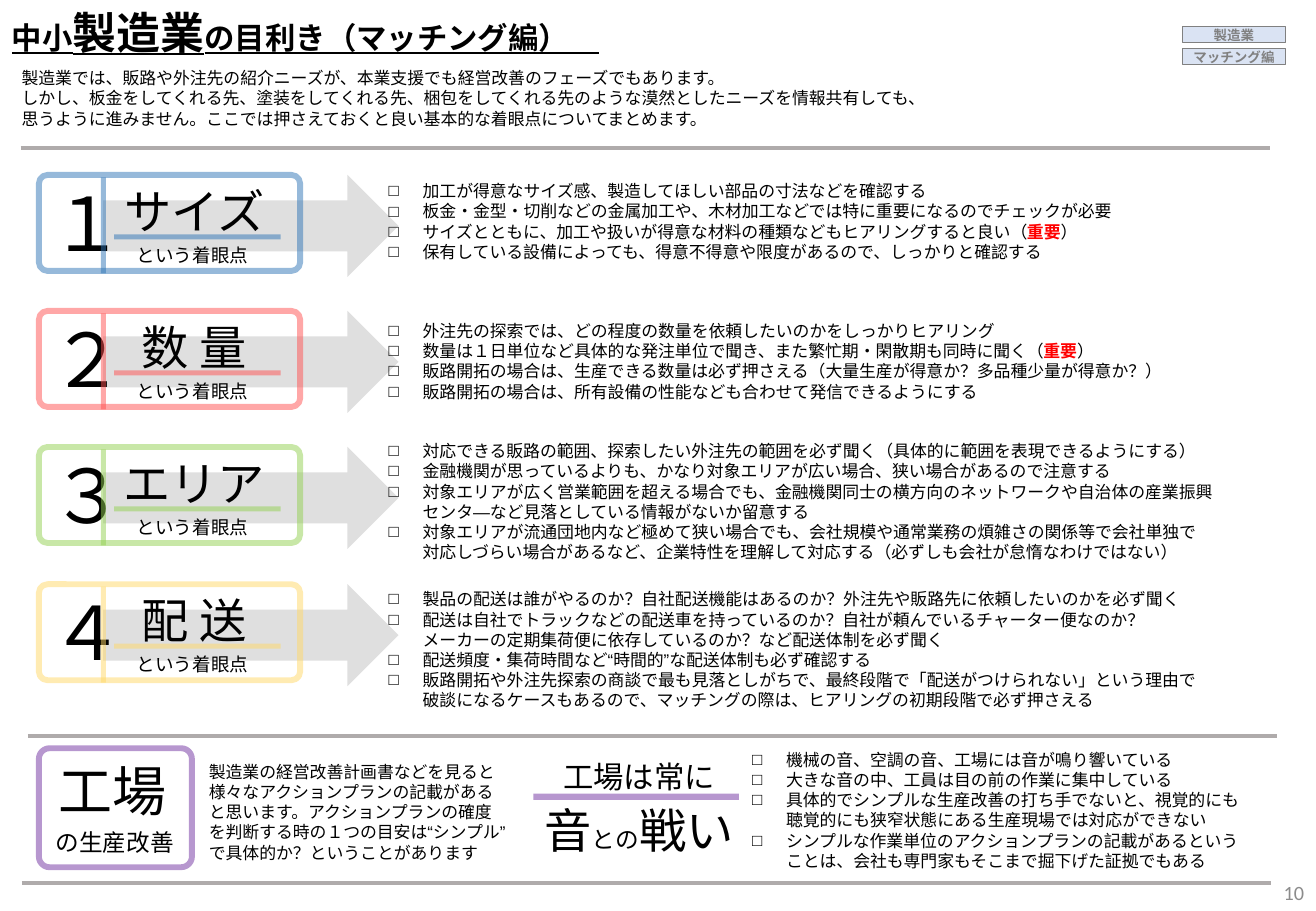
from lxml.etree import SubElement
from pptx import Presentation
from pptx.dml.color import RGBColor
from pptx.enum.shapes import MSO_CONNECTOR, MSO_SHAPE
from pptx.enum.text import MSO_ANCHOR, PP_ALIGN
from pptx.oxml.ns import qn
from pptx.util import Pt

SCALE = 9144
ARIAL, CALIBRI, NOTO = "Arial", "Calibri", "Noto Sans CJK JP"
LEADING = {ARIAL: 1.2, CALIBRI: 1.25, NOTO: 1.3}
BLACK, GREY, RULE, RED, PURPLE = "000000", "808080", "AFABAB", "FF0000", "7030A0"


def px(*nums):
    return [round(n * SCALE) for n in nums]


def paint(target, tint, alpha=100):
    target.solid()
    target.fore_color.rgb = RGBColor.from_string(tint)
    if alpha < 100:
        color = target._xPr.find(f"{qn('a:solidFill')}/{qn('a:srgbClr')}")
        SubElement(color, qn("a:alpha")).set("val", str(alpha * 1000))


class Deck:
    def __init__(self, width, height):
        self.file = Presentation()
        self.file.slide_width, self.file.slide_height = px(width, height)
        self.slide = self.file.slides.add_slide(self.file.slide_layouts[6])
        self.shapes = self.slide.shapes

    def style(self, frame, rows, size, font, tint, bold, align):
        frame.word_wrap = True
        frame.text = "\n".join(row.split("|")[0] for row in rows)
        for para, row in zip(frame.paragraphs, rows):
            para.alignment = align
            para.line_spacing = Pt(round(size * LEADING[font], 1))
            for part in row.split("|")[1:]:
                para.add_run().text = part
            for run in para.runs:
                run.font.name = font
                SubElement(run.font._element, qn("a:ea")).set("typeface", font)
                run.font.size = Pt(size)
                run.font.bold = bold
                run.font.color.rgb = RGBColor.from_string(tint)
        return frame

    def text(self, area, rows, size=10, font=ARIAL, tint=BLACK, bold=False,
             align=PP_ALIGN.LEFT):
        frame = self.shapes.add_textbox(*px(*area)).text_frame
        return self.style(frame, rows, size, font, tint, bold, align)

    def label(self, area, words, size, font=NOTO):
        return self.text(area, [words], size, font, align=PP_ALIGN.CENTER)

    def checks(self, area, rows):
        frame = self.text(area, rows)
        for para in frame.paragraphs:
            props = para._p.get_or_add_pPr()
            indent = px(28)[0]
            props.set("marL", str(indent))
            props.set("indent", str(-indent))
            SubElement(props, qn("a:buFont")).set("typeface", ARIAL)
            SubElement(props, qn("a:buChar")).set("char", "□")
            for run in para.runs:
                if run.text == "重要":
                    run.font.bold = True
                    run.font.color.rgb = RGBColor.from_string(RED)

    def shape(self, kind, area, fill=None, line=None, width=1, alpha=100):
        shape = self.shapes.add_shape(kind, *px(*area))
        shape.shadow.inherit = False
        if fill:
            paint(shape.fill, fill, alpha)
        else:
            shape.fill.background()
        if line:
            shape.line.width = Pt(width)
            paint(shape.line.fill, line, alpha)
        else:
            shape.line.fill.background()
        return shape

    def frame(self, area, tint):
        shape = self.shape(MSO_SHAPE.ROUNDED_RECTANGLE, area, None, tint, 3.5, 50)
        shape.adjustments[0] = 0.09

    def line(self, start, end, tint=RULE, width=2.25, alpha=100):
        line = self.shapes.add_connector(MSO_CONNECTOR.STRAIGHT, *px(*start, *end))
        line.line.width = Pt(width)
        paint(line.line.fill, tint, alpha)
        SubElement(line._element.spPr, qn("a:effectLst"))

    def badge(self, top, words):
        shape = self.shape(MSO_SHAPE.RECTANGLE, (973, top, 85, 13), "DAE3F3", GREY, 0.75)
        frame = self.style(shape.text_frame, [words], 8, CALIBRI, GREY, True,
                           PP_ALIGN.CENTER)
        frame.vertical_anchor = MSO_ANCHOR.MIDDLE
        frame.margin_left = frame.margin_right = 0
        frame.margin_top = frame.margin_bottom = 0

    def card(self, top, digit, title, tint):
        self.shape(MSO_SHAPE.RIGHT_ARROW, (85, top, 243, 84), GREY, alpha=25)
        self.label((91, top - 3, 138, 57), title, 28)
        self.label((32, top - 9, 55, 84), digit, 44)
        self.frame((32, top, 215, 79), tint)
        self.line((94, top + 51), (231, top + 51), tint, 3, 50)
        self.label((87, top + 51, 143, 29), "という着眼点", 11, CALIBRI)
        self.line((85, top + 2), (85, top + 81), tint, 3, 50)


CARDS = [
    (144, "１", "サイズ", "2E75B6", 144, [
        "加工が得意なサイズ感、製造してほしい部品の寸法などを確認する",
        "板金・金型・切削などの金属加工や、木材加工などでは特に重要になるのでチェックが必要",
        "サイズとともに、加工や扱いが得意な材料の種類などもヒアリングすると良い（|重要|）",
        "保有している設備によっても、得意不得意や限度があるので、しっかりと確認する"]),
    (256, "２", "数 量", "FF5050", 259, [
        "外注先の探索では、どの程度の数量を依頼したいのかをしっかりヒアリング",
        "数量は１日単位など具体的な発注単位で聞き、また繁忙期・閑散期も同時に聞く（|重要|）",
        "販路開拓の場合は、生産できる数量は必ず押さえる（大量生産が得意か？多品種少量が得意か？）",
        "販路開拓の場合は、所有設備の性能なども合わせて発信できるようにする"]),
    (368, "３", "エリア", "92D050", 358, [
        "対応できる販路の範囲、探索したい外注先の範囲を必ず聞く（具体的に範囲を表現できるようにする）",
        "金融機関が思っているよりも、かなり対象エリアが広い場合、狭い場合があるので注意する",
        "対象エリアが広く営業範囲を超える場合でも、金融機関同士の横方向のネットワークや自治体の産業振興"
        "\vセンタ―など見落としている情報がないか留意する",
        "対象エリアが流通団地内など極めて狭い場合でも、会社規模や通常業務の煩雑さの関係等で会社単独で"
        "\v対応しづらい場合があるなど、企業特性を理解して対応する（必ずしも会社が怠惰なわけではない）"]),
    (481, "４", "配 送", "FFD966", 480, [
        "製品の配送は誰がやるのか？自社配送機能はあるのか？外注先や販路先に依頼したいのかを必ず聞く",
        "配送は自社でトラックなどの配送車を持っているのか？自社が頼んでいるチャーター便なのか？"
        "\vメーカーの定期集荷便に依存しているのか？など配送体制を必ず聞く",
        "配送頻度・集荷時間など“時間的”な配送体制も必ず確認する",
        "販路開拓や外注先探索の商談で最も見落としがちで、最終段階で「配送がつけられない」という理由で"
        "\v破談になるケースもあるので、マッチングの際は、ヒアリングの初期段階で必ず押さえる"]),
]


def main():
    deck = Deck(1083, 750)
    for left, top in ((17, 122), (23, 606), (18, 727)):
        deck.line((left, top), (left + 1028, top))

    title = deck.text((0, 0, 705, 54), ["中小|製造業|の目利き（マッチング編）　"], 18, bold=True)
    title.paragraphs[0].line_spacing = Pt(31)
    for run in title.paragraphs[0].runs:
        run.font.underline = True
    title.paragraphs[0].runs[1].font.size = Pt(26)
    deck.badge(22, "製造業")
    deck.badge(40, "マッチング編")
    deck.text((8, 51, 837, 77), [
        "製造業では、販路や外注先の紹介ニーズが、本業支援でも経営改善のフェーズでもあります。",
        "しかし、板金をしてくれる先、塗装をしてくれる先、梱包をしてくれる先のような漠然としたニーズを情報共有しても、",
        "思うように進みません。ここでは押さえておくと良い基本的な着眼点についてまとめます。"])

    for top, digit, name, tint, start, rows in CARDS:
        deck.card(top, digit, name, tint)
        deck.checks((310, start, 758, 111), rows)

    deck.label((19, 614, 148, 64), "工場", 32)
    deck.frame((32, 616, 126, 98), PURPLE)
    deck.label((20, 676, 149, 34), "の生産改善", 14, CALIBRI)
    deck.text((162, 622, 368, 94), [
        "製造業の経営改善計画書などを見ると",
        "様々なアクションプランの記載がある",
        "と思います。アクションプランの確度",
        "を判断する時の１つの目安は“シンプル”",
        "で具体的か？ということがあります"])
    deck.label((415, 617, 222, 40), "工場は常に", 18)
    deck.line((439, 656), (608, 656), PURPLE, 3.75, 50)
    fight = deck.label((402, 651, 248, 57), "音|との|戦い", 28)
    fight.paragraphs[0].runs[1].font.size = Pt(14)
    deck.checks((609, 612, 442, 128), [
        "機械の音、空調の音、工場には音が鳴り響いている",
        "大きな音の中、工員は目の前の作業に集中している",
        "具体的でシンプルな生産改善の打ち手でないと、視覚的にも"
        "\v聴覚的にも狭窄状態にある生産現場では対応ができない",
        "シンプルな作業単位のアクションプランの記載があるという"
        "\vことは、会社も専門家もそこまで掘下げた証拠でもある"])
    page = deck.text((1030, 718, 53, 32), ["10"], 12, CALIBRI, "8C8C8C",
                     align=PP_ALIGN.RIGHT)
    page.vertical_anchor = MSO_ANCHOR.MIDDLE
    deck.file.save("out.pptx")


if __name__ == "__main__":
    main()
